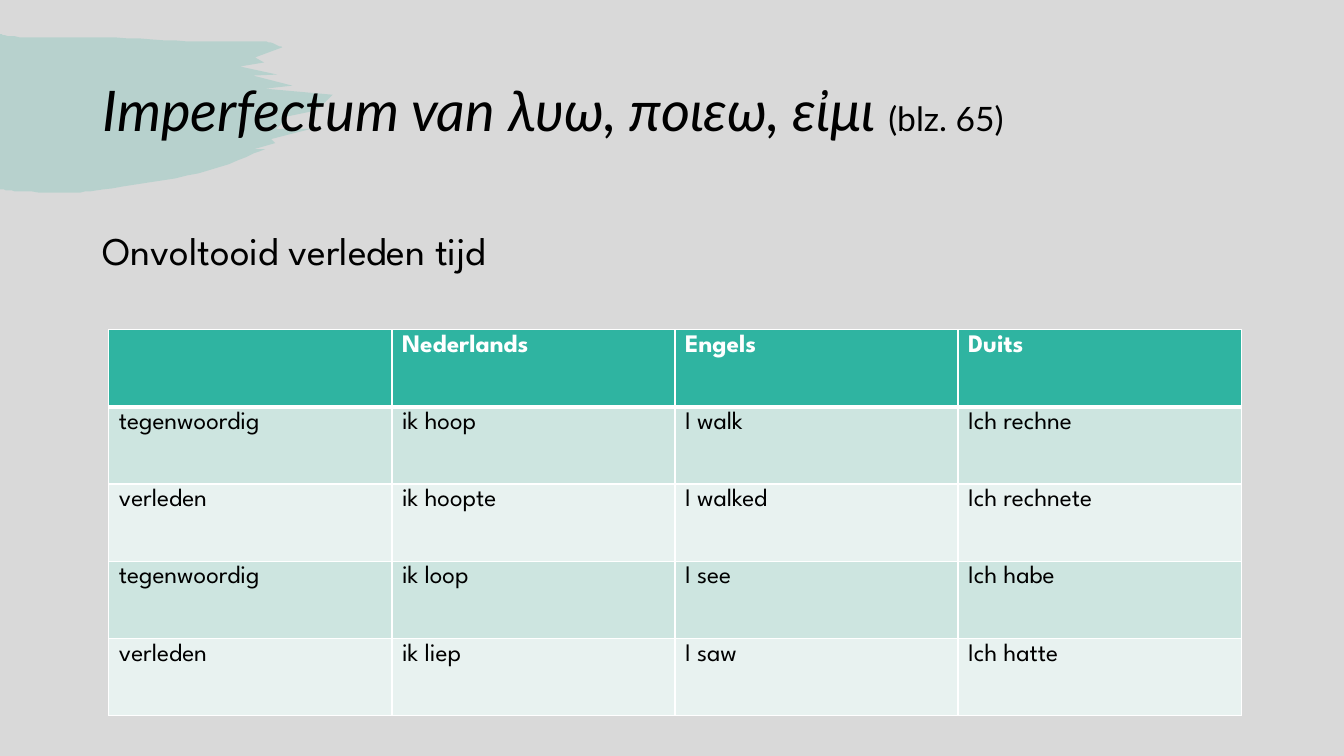
"""Build the slide on the imperfectum with its table of tenses."""
import lxml.etree
import pptx
import pptx.dml.color
import pptx.enum.text
import pptx.oxml.ns
import pptx.util

Inches = pptx.util.Inches
Pt = pptx.util.Pt
RGB = pptx.dml.color.RGBColor.from_string
qn = pptx.oxml.ns.qn
ANCHOR = pptx.enum.text.MSO_ANCHOR


class Theme:
    """Colours and text styles of the slide."""
    ground = "D9D9D9"
    accent = "2FB4A1"
    ink = "000000"
    light = "FFFFFF"
    bands = ("CDE5E0", "E8F2F0")
    brush_alpha = 20
    title = dict(name="Lato", size=Pt(40), italic=True)
    page = dict(name="Lato", size=Pt(24), italic=False)
    lead = dict(name="League Spartan", size=Pt(28))
    body = dict(name="League Spartan", size=Pt(18), bold=False)
    header = dict(body, bold=True)


BRUSH_UNIT = Inches(0.01)
BRUSH_TOP = [(0, 34), (25, 37), (102, 37), (194, 41), (248, 41), (264, 41), (280, 47)]
BRUSH_BOTTOM = [(263, 148), (197, 172), (102, 188), (65, 191), (23, 190), (0, 188)]
BRISTLE_TIPS = [(280, 47), (262, 62), (275, 74), (290, 85), (330, 94),
                (307, 111), (280, 122), (308, 128), (273, 142)]
BRISTLE_NOTCHES = [(253, 57), (238, 66), (251, 75), (263, 88), (318, 106),
                   (283, 116), (274, 128), (269, 138), (252, 148)]

TENSES = [
    ("", "Nederlands", "Engels", "Duits"),
    ("tegenwoordig", "ik hoop", "I walk", "Ich rechne"),
    ("verleden", "ik hoopte", "I walked", "Ich rechnete"),
    ("tegenwoordig", "ik loop", "I see", "Ich habe"),
    ("verleden", "ik liep", "I saw", "Ich hatte"),
]


def smooth(knots, steps=8):
    """Return points on a Catmull-Rom curve through the knots."""
    padded = [knots[0], *knots, knots[-1]]
    points = [knots[0]]
    for quad in zip(padded, padded[1:], padded[2:], padded[3:]):
        for step in range(1, steps + 1):
            t = step / steps
            points.append(tuple(
                b + t * (c - a) / 2
                + t ** 2 * (2 * a - 5 * b + 4 * c - d) / 2
                + t ** 3 * (3 * b - a - 3 * c + d) / 2
                for a, b, c, d in zip(*quad)))
    return points


def brush_outline():
    """Join the smooth edges with bristles that run from tip to notch."""
    bristles = [point for pair in zip(BRISTLE_TIPS, BRISTLE_NOTCHES) for point in pair]
    return smooth(BRUSH_TOP) + bristles + smooth(BRUSH_BOTTOM)


class Deck:
    """Hold the style and the current slide."""

    def __init__(self, theme):
        """Open a wide presentation with one blank slide."""
        self.theme = theme
        self.prs = pptx.Presentation()
        self.prs.slide_width = Inches(13.33)
        self.prs.slide_height = Inches(7.5)
        self.s = self.prs.slides.add_slide(self.prs.slide_layouts[6])
        self.fill(self.s.background, theme.ground)

    def fill(self, target, color):
        """Give the target a solid fill."""
        target.fill.solid()
        target.fill.fore_color.rgb = RGB(color)

    def format(self, target, values):
        """Set each named attribute of the target."""
        for name, value in values.items():
            setattr(target, name, value)

    def run(self, p, text, color, style):
        """Add a run in the given colour and style."""
        r = p.add_run()
        r.text = text
        r.font.color.rgb = RGB(color)
        self.format(r.font, style)

    def outline(self, points, unit, color, alpha):
        """Draw a filled, translucent outline measured in the given unit."""
        builder = self.s.shapes.build_freeform(*points[0], scale=unit)
        builder.add_line_segments(points[1:], close=True)
        sp = builder.convert_to_shape()
        sp.shadow.inherit = False
        sp.line.fill.background()
        self.fill(sp, color)
        clr = sp._element.spPr.find(qn("a:solidFill"))[0]
        lxml.etree.SubElement(clr, qn("a:alpha"), val=str(alpha * 1000))

    def text(self, box, runs, anchor, **paragraph):
        """Add a text box with one paragraph of (text, style) runs."""
        tf = self.s.shapes.add_textbox(*map(Inches, box)).text_frame
        self.format(tf, dict(word_wrap=True, vertical_anchor=anchor))
        p = tf.paragraphs[0]
        self.format(p, paragraph)
        for text, style in runs:
            self.run(p, text, self.theme.ink, style)

    def borders(self, cell, **widths):
        """Set the cell's border widths in points, keyed by side."""
        tcPr = cell._tc.get_or_add_tcPr()
        for side, width in widths.items():
            ln = lxml.etree.SubElement(tcPr, qn(f"a:ln{side}"), w=str(Pt(width)))
            solid = lxml.etree.SubElement(ln, qn("a:solidFill"))
            lxml.etree.SubElement(solid, qn("a:srgbClr"), val=self.theme.light)

    def cell(self, cell, text, row):
        """Style one cell as header or banded body by its row number."""
        t = self.theme
        if row == 0:
            ground, color, style = t.accent, t.light, t.header
        else:
            ground, color, style = t.bands[(row - 1) % 2], t.ink, t.body
        self.borders(cell, L=1, R=1, T=3 if row == 1 else 1, B=3 if row == 0 else 1)
        self.fill(cell, ground)
        if text:
            self.run(cell.text_frame.paragraphs[0], text, color, style)

    def table(self, box, rows):
        """Add a table with a header row and banded body rows."""
        frame = self.s.shapes.add_table(len(rows), len(rows[0]), *map(Inches, box))
        for i, row in enumerate(rows):
            for j, text in enumerate(row):
                self.cell(frame.table.cell(i, j), text, i)


def main():
    """Compose and save the slide."""
    t = Theme()
    deck = Deck(t)
    deck.outline(brush_outline(), BRUSH_UNIT, t.accent, t.brush_alpha)
    deck.text((0.92, 0.4, 11.5, 1.45),
              [("Imperfectum van λυω, ποιεω, εἰμι ", t.title), ("(blz. 65)", t.page)],
              ANCHOR.MIDDLE, line_spacing=0.9)
    deck.text((0.92, 2.2, 11.5, 4.55), [("Onvoltooid verleden tijd", t.lead)],
              ANCHOR.TOP, space_before=Pt(10))
    deck.table((1.08, 3.27, 11.23, 3.83), TENSES)
    deck.prs.save("out.pptx")


if __name__ == "__main__":
    main()
